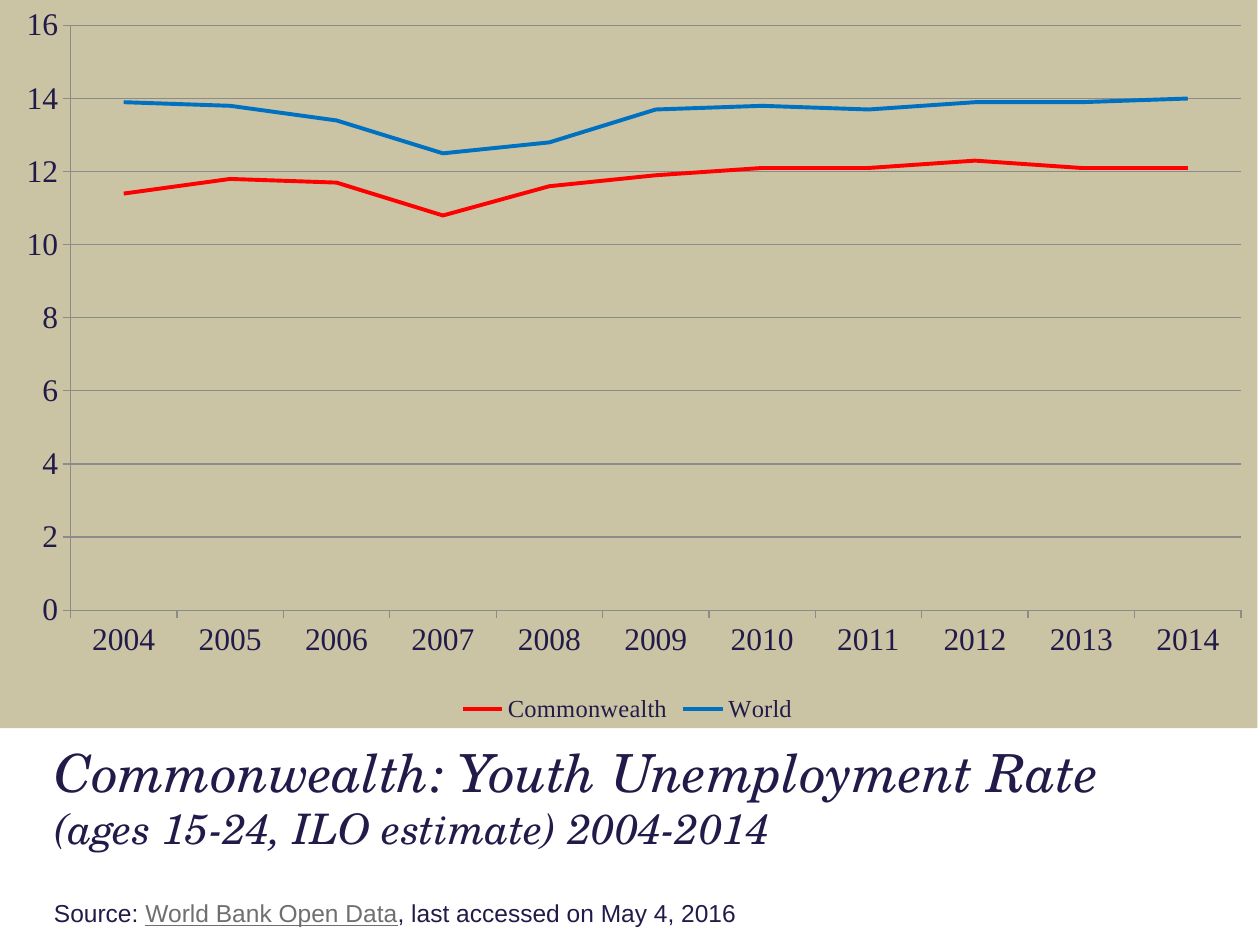
"""Build a slide with a line chart of Commonwealth and world youth unemployment."""
import lxml.etree
import pptx
import pptx.chart.data
import pptx.dml.color
import pptx.enum.chart
import pptx.enum.text
import pptx.oxml
import pptx.oxml.ns
import pptx.util

Inches = pptx.util.Inches
Pt = pptx.util.Pt
RGBColor = pptx.dml.color.RGBColor
qn = pptx.oxml.ns.qn

NAVY = RGBColor(0x22, 0x1A, 0x48)
LINK_GRAY = RGBColor(0x6E, 0x6F, 0x6E)
GRID_GRAY = RGBColor(0x8B, 0x8B, 0x8B)
SAND = RGBColor(0xCA, 0xC4, 0xA5)
RED = RGBColor(0xFF, 0x00, 0x00)
BLUE = RGBColor(0x00, 0x70, 0xC0)

TITLE_LINES = [
    ("Commonwealth: Youth Unemployment Rate ", 30),
    ("(ages 15-24, ILO estimate) 2004-2014", 24),
]
SOURCE_PARTS = [
    ("Source: ", NAVY, False),
    ("World Bank Open Data", LINK_GRAY, True),
    (", last accessed on May 4, 2016", NAVY, False),
]
YEARS = [str(year) for year in range(2004, 2015)]
RATES = [
    ("Commonwealth", RED, [11.4, 11.8, 11.7, 10.8, 11.6, 11.9, 12.1, 12.1, 12.3, 12.1, 12.1]),
    ("World", BLUE, [13.9, 13.8, 13.4, 12.5, 12.8, 13.7, 13.8, 13.7, 13.9, 13.9, 14]),
]
PLOT_AREA = {"x": 0.06, "y": 0.035, "w": 0.93, "h": 0.8}
PLOT_AREA.update(x=0.058, w=0.929, h=0.803)


def place(box, left, top, width, height):
    box.left, box.top = Inches(left), Inches(top)
    box.width, box.height = Inches(width), Inches(height)


def add_run(paragraph, text, font_name, size, color):
    run = paragraph.add_run()
    run.text = text
    run.font.name = font_name
    run.font.size = Pt(size)
    run.font.color.rgb = color
    return run


def add_title(slide):
    title = slide.shapes.title
    place(title, 0.33, 5.78, 9.5, 1.08)
    frame = title.text_frame
    frame.word_wrap = True
    frame.auto_size = pptx.enum.text.MSO_AUTO_SIZE.NONE
    frame.vertical_anchor = pptx.enum.text.MSO_ANCHOR.MIDDLE
    heading = frame.paragraphs[0]
    heading.alignment = pptx.enum.text.PP_ALIGN.LEFT
    for index, (text, size) in enumerate(TITLE_LINES):
        if index:
            heading.add_line_break()
        add_run(heading, text, "TeX Gyre Schola", size, NAVY).font.italic = True


def add_source(slide):
    source = slide.shapes.add_textbox(Inches(0.33), Inches(7.08), Inches(8.83), Inches(0.34))
    source.text_frame.word_wrap = True
    for text, color, underlined in SOURCE_PARTS:
        run = add_run(source.text_frame.paragraphs[0], text, "Arial", 14, color)
        run.font.underline = underlined


def fill_chart(chart, color):
    properties = pptx.oxml.parse_xml(
        f'<c:spPr xmlns:c="{pptx.oxml.ns.namespaces("c")["c"]}" '
        f'xmlns:a="{pptx.oxml.ns.namespaces("a")["a"]}">'
        f'<a:solidFill><a:srgbClr val="{color}"/></a:solidFill>'
        "<a:ln><a:noFill/></a:ln></c:spPr>"
    )
    chart.element.find(qn("c:chart")).addnext(properties)


def set_plot_area(chart, area):
    plot_area = chart.element.find(qn("c:chart")).find(qn("c:plotArea"))
    layout = plot_area.find(qn("c:layout"))
    if layout is None:
        layout = lxml.etree.Element(qn("c:layout"))
        plot_area.insert(0, layout)
    manual = lxml.etree.SubElement(layout, qn("c:manualLayout"))
    settings = {"layoutTarget": "inner", "xMode": "edge", "yMode": "edge", **area}
    for tag, value in settings.items():
        lxml.etree.SubElement(manual, qn(f"c:{tag}")).set("val", str(value))


def add_rate_chart(slide):
    data = pptx.chart.data.CategoryChartData(number_format="0.0")
    data.categories = YEARS
    for name, _, values in RATES:
        data.add_series(name, values)
    chart = slide.shapes.add_chart(
        pptx.enum.chart.XL_CHART_TYPE.LINE,
        Inches(-0.02), Inches(0), Inches(10), Inches(5.78), data,
    ).chart
    chart.has_title = False
    chart.font.name = "Times New Roman"
    chart.font.size = Pt(18)
    chart.font.color.rgb = NAVY

    chart.has_legend = True
    legend = chart.legend
    legend.position = pptx.enum.chart.XL_LEGEND_POSITION.BOTTOM
    legend.include_in_layout = False
    legend.font.name = "Times New Roman"
    legend.font.size = Pt(14)
    legend.font.color.rgb = NAVY

    rate_axis = chart.value_axis
    rate_axis.minimum_scale, rate_axis.maximum_scale, rate_axis.major_unit = 0, 16, 2
    rate_axis.tick_labels.number_format = "0"
    rate_axis.tick_labels.number_format_is_linked = False
    rate_axis.has_major_gridlines = True
    for axis in (rate_axis, chart.category_axis):
        axis.major_tick_mark = pptx.enum.chart.XL_TICK_MARK.OUTSIDE
    for guide in (rate_axis, chart.category_axis, rate_axis.major_gridlines):
        guide.format.line.color.rgb = GRID_GRAY
        guide.format.line.width = Pt(0.75)

    plot = chart.plots[0]
    plot.vary_by_categories = False
    for series, (_, color, _) in zip(plot.series, RATES):
        series.smooth = False
        series.marker.style = pptx.enum.chart.XL_MARKER_STYLE.NONE
        series.format.line.color.rgb = color
        series.format.line.width = Pt(2.25)
    set_plot_area(chart, PLOT_AREA)
    fill_chart(chart, SAND)


def main():
    deck = pptx.Presentation()
    deck.slide_width, deck.slide_height = Inches(10), Inches(7.5)
    slide = deck.slides.add_slide(deck.slide_layouts.get_by_name("Title Only"))
    add_title(slide)
    add_source(slide)
    add_rate_chart(slide)
    deck.save("out.pptx")


if __name__ == "__main__":
    main()
